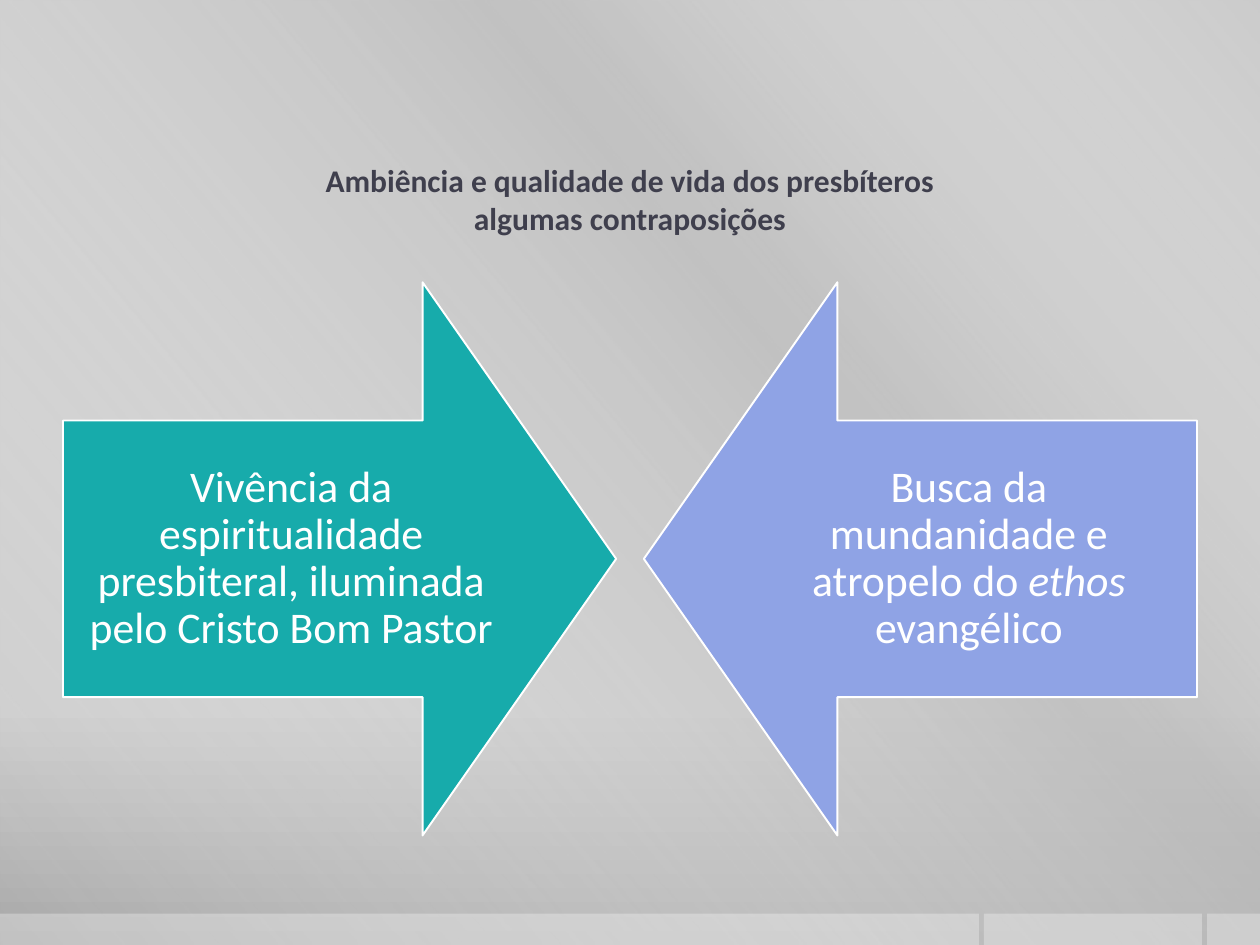
import dataclasses

import lxml.etree
import pptx
import pptx.dml.color
import pptx.enum.shapes
import pptx.enum.text
import pptx.oxml.ns
import pptx.util

Inches = pptx.util.Inches
Pt = pptx.util.Pt
ARROW = pptx.enum.shapes.MSO_SHAPE
ALIGN = pptx.enum.text.PP_ALIGN
qn = pptx.oxml.ns.qn


def rgb(code):
    return pptx.dml.color.RGBColor.from_string(code)


def set_all(target, values):
    for name, value in values.items():
        setattr(target, name, value)


def add_alpha(color, percent):
    lxml.etree.SubElement(color, qn("a:alpha"), val=str(percent * 1000))


@dataclasses.dataclass(frozen=True)
class Theme:
    font: str = "Calibri"
    title_size: int = 18
    body_size: int = 25
    title_color: str = "3F3F4D"
    white: str = "FFFFFF"
    teal: str = "17ABAB"
    periwinkle: str = "8FA3E5"
    # Gradient stops: position, colour, opacity (all in percent)
    backdrop: tuple = ((0, "CBCBCB", 100), (76, "C8C8C8", 100), (100, "A7A7A7", 100))
    sheen: tuple = ((0, "FFFFFF", 0), (34, "BFBFBF", 61), (38, "BFBFBF", 76), (100, "FFFFFF", 0))


class SlideBuilder:
    def __init__(self, slide, theme):
        self.slide = slide
        self.theme = theme

    def gradient(self, fill, owner, stops, angle):
        """Fill with any number of stops; angle runs clockwise, owner is the XML holding the fill."""
        fill.gradient()
        fill.gradient_angle = 360 - angle
        stop_list = owner.find(".//" + qn("a:gsLst"))
        for old_stop in list(stop_list):
            stop_list.remove(old_stop)
        for position, code, opacity in stops:
            stop = lxml.etree.SubElement(stop_list, qn("a:gs"), pos=str(position * 1000))
            color = lxml.etree.SubElement(stop, qn("a:srgbClr"), val=code)
            add_alpha(color, opacity)

    def background(self):
        self.gradient(self.slide.background.fill, self.slide.element, self.theme.backdrop, 90)

    def shape(self, preset, left, top, width, height):
        shape = self.slide.shapes.add_shape(
            preset, Inches(left), Inches(top), Inches(width), Inches(height))
        shape.shadow.inherit = False
        return shape

    def sheen(self, width, height):
        sheen = self.shape(ARROW.RECTANGLE, 0, 0, width, height)
        sheen.line.fill.background()
        self.gradient(sheen.fill, sheen.element.spPr, self.theme.sheen, 140)

    def footer_tile(self, left, width):
        tile = self.shape(ARROW.RECTANGLE, left, 7.25, width, 0.25)
        tile.line.fill.background()
        tile.fill.solid()
        tile.fill.fore_color.rgb = rgb(self.theme.white)
        add_alpha(tile.element.spPr.find(".//" + qn("a:srgbClr")), 30)

    def frame(self, shape, inset_x, inset_y):
        set_all(shape.text_frame, {
            "word_wrap": True,
            "auto_size": pptx.enum.text.MSO_AUTO_SIZE.NONE,
            "vertical_anchor": pptx.enum.text.MSO_ANCHOR.MIDDLE,
            "margin_left": Inches(inset_x), "margin_right": Inches(inset_x),
            "margin_top": Inches(inset_y), "margin_bottom": Inches(inset_y),
        })
        paragraph = shape.text_frame.paragraphs[0]
        paragraph.alignment = ALIGN.CENTER
        return paragraph

    def run(self, paragraph, text, color, **font):
        run = paragraph.add_run()
        run.text = text
        set_all(run.font, {"name": self.theme.font, **font})
        run.font.color.rgb = rgb(color)

    def title(self, lines):
        title = self.slide.shapes.title
        set_all(title, {"left": Inches(0.5), "top": Inches(1.08),
                        "width": Inches(9), "height": Inches(1)})
        # Bring the title in front of the backdrop shapes
        title.element.getparent().append(title.element)
        paragraph = self.frame(title, 0, 0.05)
        for index, line in enumerate(lines):
            if index:
                paragraph.add_line_break()
            self.run(paragraph, line, self.theme.title_color,
                     size=Pt(self.theme.title_size), bold=True)

    def arrow(self, preset, left, color, phrases):
        """Draw a square block arrow; phrases are (text, italic) pairs."""
        arrow = self.shape(preset, left, 2.24, 4.39, 4.39)
        arrow.adjustments[0] = 0.5
        arrow.adjustments[1] = 0.35
        arrow.fill.solid()
        arrow.fill.fore_color.rgb = rgb(color)
        arrow.line.color.rgb = rgb(self.theme.white)
        arrow.line.width = Pt(1.1)
        paragraph = self.frame(arrow, 0.19, 0.19)
        paragraph.line_spacing = 0.9
        for text, italic in phrases:
            self.run(paragraph, text, self.theme.white,
                     size=Pt(self.theme.body_size), italic=italic)


def main():
    deck = pptx.Presentation()
    deck.slide_width, deck.slide_height = Inches(10), Inches(7.5)
    theme = Theme()
    builder = SlideBuilder(deck.slides.add_slide(deck.slide_layouts[5]), theme)

    builder.background()
    builder.sheen(10, 7.5)
    for left, width in ((9.58, 0.42), (7.81, 1.73), (0, 7.77)):
        builder.footer_tile(left, width)

    builder.title(["Ambiência e qualidade de vida dos presbíteros",
                   "algumas contraposições"])
    builder.arrow(ARROW.RIGHT_ARROW, 0.5, theme.teal, [
        ("Vivência da espiritualidade presbiteral, iluminada pelo Cristo Bom Pastor", False)])
    builder.arrow(ARROW.LEFT_ARROW, 5.11, theme.periwinkle, [
        ("Busca da mundanidade e atropelo do ", False),
        ("ethos ", True),
        ("evangélico", False)])

    deck.save("out.pptx")


if __name__ == "__main__":
    main()
